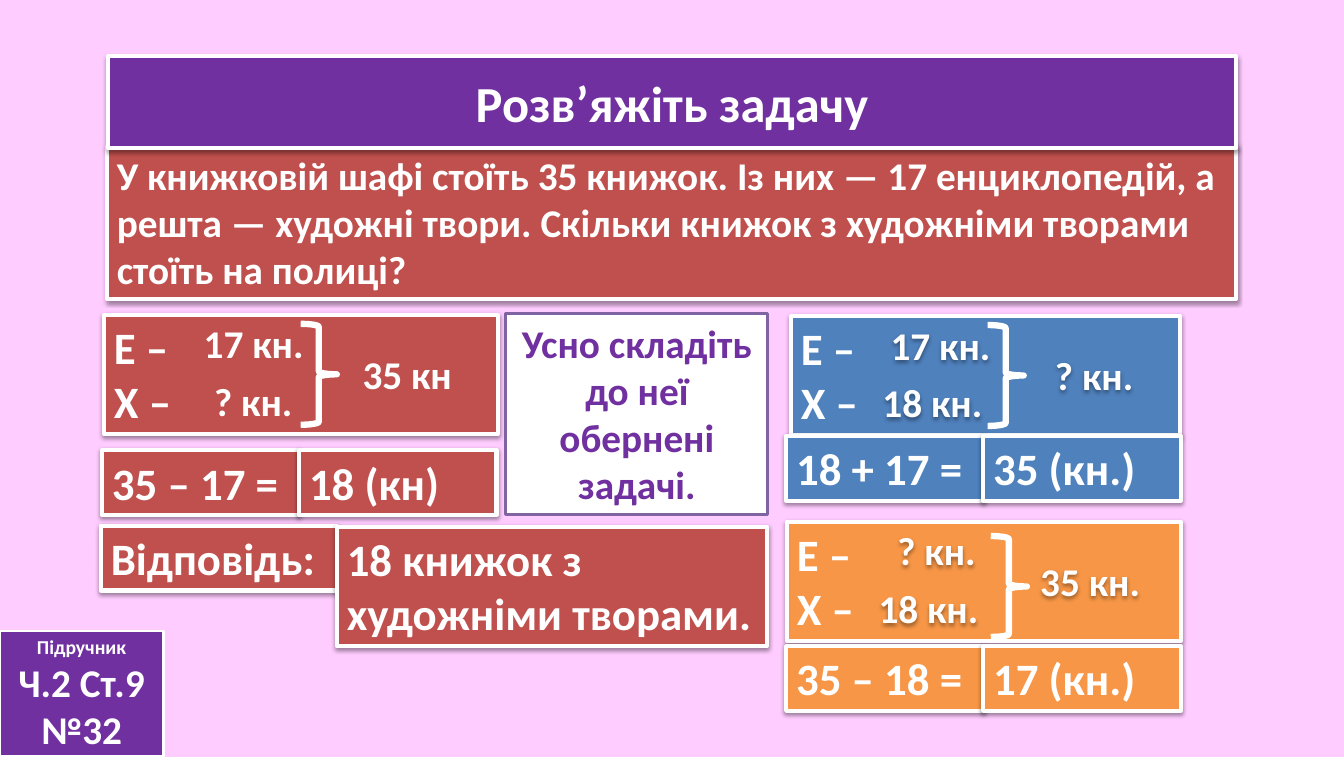
from dataclasses import dataclass

from lxml import etree
from pptx import Presentation
from pptx.dml.color import RGBColor
from pptx.enum.shapes import MSO_SHAPE
from pptx.enum.text import MSO_ANCHOR, PP_ALIGN
from pptx.oxml.ns import qn
from pptx.util import Cm, Pt

RECT, BRACE = MSO_SHAPE.RECTANGLE, MSO_SHAPE.RIGHT_BRACE
LEFT, CENTER = PP_ALIGN.LEFT, PP_ALIGN.CENTER
TOP, MIDDLE = MSO_ANCHOR.TOP, MSO_ANCHOR.MIDDLE

FONT = "Calibri"
COLORS = {
    "pink": "FFCCFF",
    "red": "C0504D",
    "blue": "4F81BD",
    "orange": "F79646",
    "purple": "7030A0",
    "violet": "8064A2",
    "white": "FFFFFF",
    "black": "000000",
}


# Lengths are in centimetres, text sizes and line widths in points
@dataclass
class Box:
    left: float
    top: float
    width: float
    height: float
    lines: list[str]
    sizes: list[int]
    fill: str | None = None
    line: str = "white"
    weight: float = 3
    ink: str = "white"
    align: PP_ALIGN = LEFT
    anchor: MSO_ANCHOR = TOP
    shadow: bool = True


@dataclass
class Task:
    fill: str
    left: float
    top: float
    width: float
    first: str
    second: str
    indent: float
    span: float
    total: str
    brace: tuple[float, float]
    sum_at: tuple[float, float]
    sum: str
    result: str
    glow: bool = True


def color(name: str) -> RGBColor:
    return RGBColor.from_string(COLORS[name])


def add_shadow(shape) -> None:
    effects = shape.element.spPr.find(qn("a:effectLst"))
    outer = etree.SubElement(effects, qn("a:outerShdw"), blurRad="40000",
                             dist="20000", dir="5400000", rotWithShape="0")
    tint = etree.SubElement(outer, qn("a:srgbClr"), val=COLORS["black"])
    etree.SubElement(tint, qn("a:alpha"), val="38000")


def add_box(slide, box: Box) -> None:
    place = [Cm(v) for v in (box.left, box.top, box.width, box.height)]
    if box.fill:
        shape = slide.shapes.add_shape(RECT, *place)
        shape.fill.solid()
        shape.fill.fore_color.rgb = color(box.fill)
        shape.line.color.rgb = color(box.line)
        shape.line.width = Pt(box.weight)
    else:
        shape = slide.shapes.add_textbox(*place)
    shape.shadow.inherit = False
    if box.shadow:
        add_shadow(shape)

    frame = shape.text_frame
    frame.word_wrap = True
    frame.vertical_anchor = box.anchor
    frame.text = "\n".join(box.lines)
    for par, size in zip(frame.paragraphs, box.sizes):
        par.alignment = box.align
        par.font.name = FONT
        par.font.size = Pt(size)
        par.font.bold = True
        par.font.color.rgb = color(box.ink)


def add_brace(slide, left: float, top: float) -> None:
    brace = slide.shapes.add_shape(BRACE, Cm(left), Cm(top), Cm(0.91), Cm(2.54))
    brace.fill.background()
    brace.line.color.rgb = color("white")
    brace.line.width = Pt(4.5)
    brace.shadow.inherit = False


def add_task(slide, task: Task) -> None:
    # Short record with its amounts
    add_box(slide, Box(task.left, task.top, task.width, 3,
                       ["Е –", "Х –"], [32, 32], task.fill))
    amounts = [
        (2.01, 0, 3.51, task.first),
        (task.indent, 1.45, task.span, task.second),
        (5.89, 0.76, 3.48, task.total),
    ]
    for dx, dy, width, text in amounts:
        add_box(slide, Box(task.left + dx, task.top + dy, width, 1.45, [text],
                           [28], align=CENTER, shadow=task.glow))
    dx, dy = task.brace
    add_brace(slide, task.left + dx, task.top + dy)

    # Sum and result side by side
    left, top = task.sum_at
    for col, text in enumerate((task.sum, task.result)):
        add_box(slide, Box(left + col * 4.96, top, 4.97, 1.63,
                           [text], [32], task.fill))


BOXES = [
    # Problem and title
    Box(2.69, 3.68, 28.42, 3.84,
        ["У книжковій шафі стоїть 35 книжок. Із них — 17 енциклопедій, а решта "
         "— художні твори. Скільки книжок з художніми творами стоїть на полиці?"],
        [28], "red"),
    Box(2.72, 1.42, 28.4, 2.31, ["Розв’яжіть задачу"], [36], "purple",
        align=CENTER, anchor=MIDDLE),
    # Textbook page
    Box(0, 15.88, 4.11, 3.15, ["Підручник", "Ч.2 Ст.9", "№32"], [14, 28, 28],
        "purple", weight=2, align=CENTER, anchor=MIDDLE, shadow=False),
    # Oral work
    Box(12.73, 7.9, 6.6, 5.05, ["Усно складіть до неї обернені задачі."], [28],
        "white", "violet", 2, "purple", CENTER, shadow=False),
    # Answer
    Box(2.54, 13.23, 5.94, 1.63, ["Відповідь:"], [32], "red"),
    Box(8.48, 13.26, 10.82, 3, ["18 книжок з художніми творами."], [32], "red"),
]

TASKS = [
    Task("red", 2.62, 7.92, 9.91, "17 кн.", "? кн.", 2.41, 2.69, "35 кн",
         (4.95, 0.23), (2.57, 11.33), "35 – 17 =", "18 (кн)", glow=False),
    Task("blue", 19.91, 7.95, 9.8, "17 кн.", "18 кн.", 2.01, 3.1, "? кн.",
         (4.95, 0.23), (19.79, 10.97), "18 + 17 =", "35 (кн.)"),
    Task("orange", 19.81, 13.13, 9.91, "? кн.", "18 кн.", 2.01, 3.1, "35 кн.",
         (5.13, 0.36), (19.79, 16.26), "35 – 18 =", "17 (кн.)"),
]


def main() -> None:
    deck = Presentation()
    deck.slide_width, deck.slide_height = Cm(33.83), Cm(19.05)
    slide = deck.slides.add_slide(deck.slide_layouts[6])
    back = slide.background.fill
    back.solid()
    back.fore_color.rgb = color("pink")

    for box in BOXES:
        add_box(slide, box)
    for task in TASKS:
        add_task(slide, task)
    deck.save("out.pptx")


if __name__ == "__main__":
    main()
